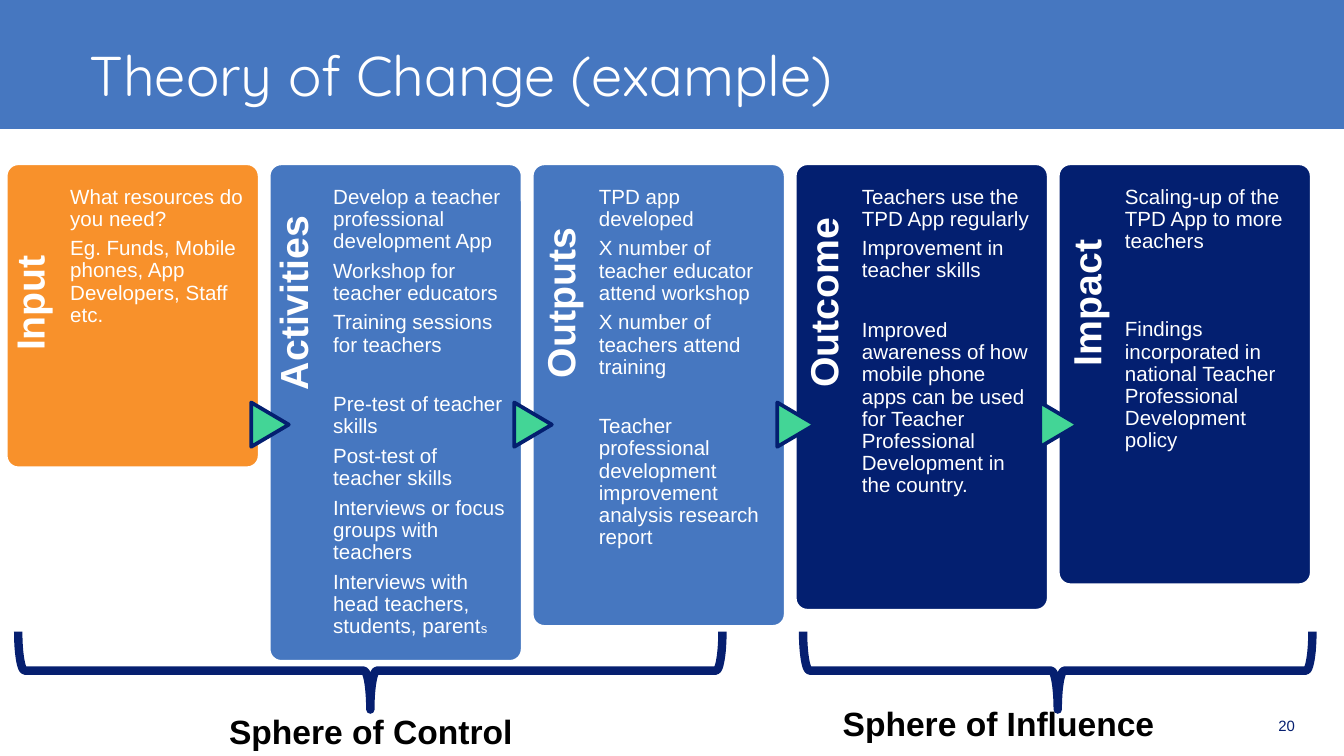
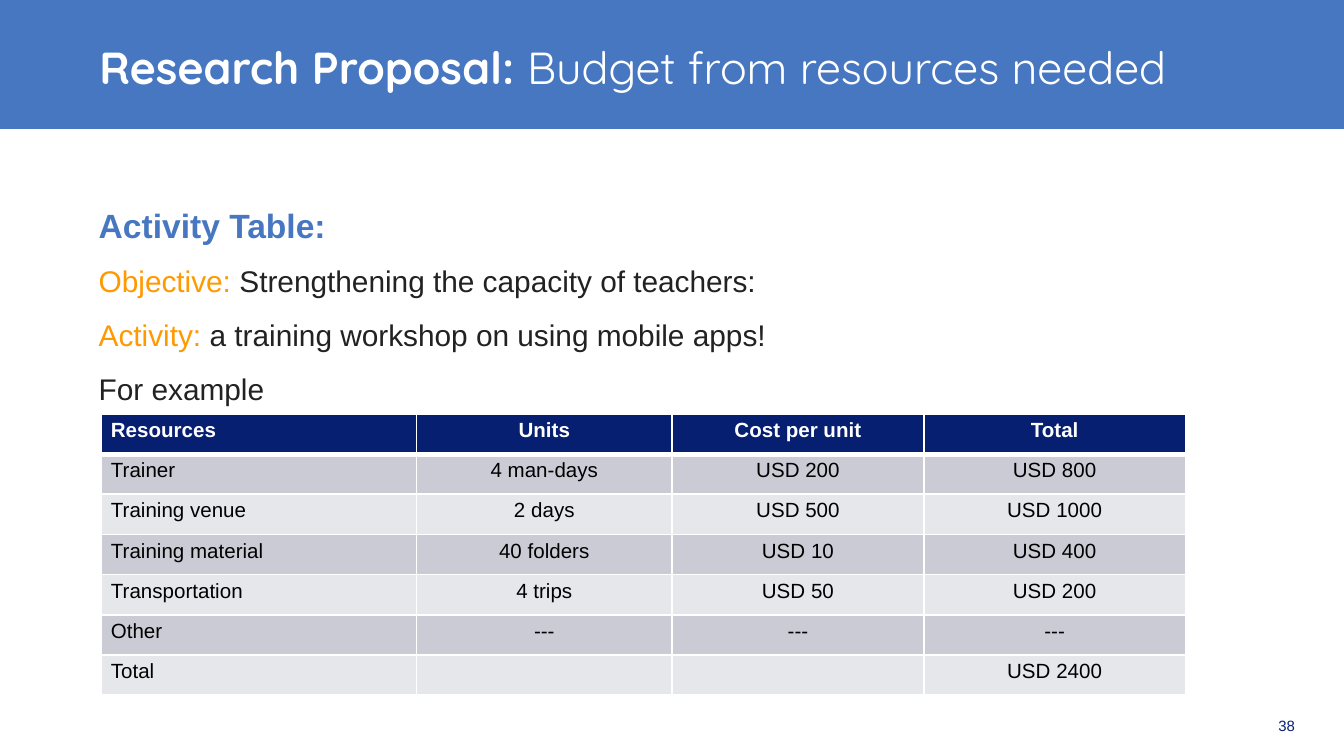
import pptx
import pptx.util
import pptx.dml.color
import pptx.enum.shapes
import pptx.enum.text
import pptx.oxml
import pptx.oxml.ns

Pt = pptx.util.Pt
RGBColor = pptx.dml.color.RGBColor
MSO_SHAPE = pptx.enum.shapes.MSO_SHAPE
ALIGN = pptx.enum.text.PP_ALIGN
ANCHOR = pptx.enum.text.MSO_ANCHOR

BLUE = RGBColor(0x46, 0x77, 0xC0)
NAVY = RGBColor(0x06, 0x1F, 0x70)
DEEP_NAVY = RGBColor(0x03, 0x1F, 0x70)
ORANGE = RGBColor(0xF8, 0x91, 0x2B)
AMBER = RGBColor(0xFF, 0x99, 0x00)
GREEN = RGBColor(0x43, 0xD5, 0x96)
WHITE = RGBColor(0xFF, 0xFF, 0xFF)
BLACK = RGBColor(0x00, 0x00, 0x00)
CHARCOAL = RGBColor(0x22, 0x22, 0x22)
GREY = RGBColor(0xCA, 0xCB, 0xD4)
PALE_GREY = RGBColor(0xE6, 0xE7, 0xEB)

prs = pptx.Presentation()
prs.slide_width = pptx.util.Inches(10)
prs.slide_height = prs.slide_width * 9 // 16
COL = prs.slide_width / 100


def add_shape(s, kind, box, fill=None, line=None, width=2, adj=None, rotation=0):
    sp = s.shapes.add_shape(kind, *[round(v * COL) for v in box])
    sp.shadow.inherit = False
    sp.rotation = rotation
    if adj is not None:
        sp.adjustments[0] = adj
    if fill is None:
        sp.fill.background()
    else:
        sp.fill.solid()
        sp.fill.fore_color.rgb = fill
    if line is None:
        sp.line.fill.background()
    else:
        sp.line.color.rgb = line
        sp.line.width = Pt(width)
    return sp


def add_text(s, box, paras, size, color, bold=False, font="Arial", align=ALIGN.LEFT,
             anchor=ANCHOR.TOP, insets=(0.75, 0.4, 0.75, 0.4), spacing=1.0):
    sp = s.shapes.add_textbox(*[round(v * COL) for v in box])
    tf = sp.text_frame
    tf.word_wrap = True
    tf.vertical_anchor = anchor
    tf.margin_left, tf.margin_top, tf.margin_right, tf.margin_bottom = [
        round(v * COL) for v in insets]
    for i, runs in enumerate(paras):
        p = tf.add_paragraph() if i else tf.paragraphs[0]
        for text in runs:
            p.add_run().text = text
        p.alignment = align
        p.line_spacing = spacing
        p.font.name = font
        p.font.size = Pt(size)
        p.font.bold = bold
        p.font.color.rgb = color
    return sp


slides = []
for number, title, size, box in [
    ("20", ["Theory of Change (example)"], 30, (5.9, 1.5, 87.4, 8)),
    ("38", ["Research Proposal: ", "Budget from resources needed"], 24, (6.65, 0.95, 86.7, 8)),
]:
    s = prs.slides.add_slide(prs.slide_layouts[6])
    add_shape(s, MSO_SHAPE.RECTANGLE, (0, -0.2, 100, 9.8), BLUE)
    sp = add_text(s, box, [title], size, WHITE, font="Quicksand", anchor=ANCHOR.MIDDLE)
    if len(title) > 1:
        sp.text_frame.paragraphs[0].runs[0].font.bold = True
    add_text(s, (88.4, 51.75, 8.7, 3), [[number]], 8, NAVY, align=ALIGN.RIGHT,
             anchor=ANCHOR.BOTTOM, insets=(0.75, 0.4, 0.75, 0.1))
    slides.append(s)

s = slides[0]
CARD_LEFT, CARD_TOP, CARD_STEP, CARD_WIDTH = 0.42, 12.15, 19.57, 18.9
cards = [
    ("Input", ORANGE, 22.7, (16.3, 3.1), (4.8, 13.1), [
        (0, ["What resources do you need?"]),
        (4, ["Eg. Funds, Mobile phones, App Developers, Staff etc."]),
    ]),
    ("Activities", BLUE, 37.1, (19.8, 3.2), (4.8, 13.1), [
        (0, ["Develop a teacher professional development App"]),
        (4, ["Workshop for teacher educators"]),
        (4, ["Training sessions for teachers"]),
        (20, ["Pre-test of teacher skills"]),
        (4, ["Post-test of teacher skills"]),
        (4, ["Interviews or focus groups with teachers"]),
        (4, ["Interviews with head teachers, students, parent", "s"]),
    ]),
    ("Outputs", BLUE, 34.5, (19, 3.8), (5, 12.8), [
        (0, ["TPD app developed"]),
        (4, ["X number of teacher educator attend workshop"]),
        (4, ["X number of teachers attend training"]),
        (20, ["Teacher professional development improvement analysis research report"]),
    ]),
    ("Outcome", DEEP_NAVY, 33.3, (18.7, 3.8), (5, 12.8), [
        (0, ["Teachers use the TPD App regularly"]),
        (4, ["Improvement in teacher skills"]),
        (20, ["Improved awareness of how mobile phone apps can be used for Teacher "
              "Professional Development in the country."]),
    ]),
    ("Impact", DEEP_NAVY, 31.4, (18.8, 3.8), (5, 12.8), [
        (0, ["Scaling-up of the TPD App to more teachers"]),
        (35.5, ["Findings incorporated in national Teacher Professional Development policy"]),
    ]),
]
for i, (label, fill, height, (lw, lh), (indent, width), items) in enumerate(cards):
    left = CARD_LEFT + i * CARD_STEP
    add_shape(s, MSO_SHAPE.ROUNDED_RECTANGLE, (left, CARD_TOP, CARD_WIDTH, height),
              fill, WHITE, adj=0.05)
    sp = add_text(s, (left + lh / 2 - lw / 2, 22.05 - lh / 2, lw, lh), [[label]], 21, WHITE,
                  bold=True, align=ALIGN.CENTER, anchor=ANCHOR.MIDDLE,
                  insets=(0, 0.8, 1, 0), spacing=0.9)
    sp.rotation = 270
    if i:
        add_shape(s, MSO_SHAPE.FLOWCHART_EXTRACT, (left - 1.55, 30.2, 3.3, 2.8),
                  GREEN, DEEP_NAVY, rotation=90)
    sp = add_text(s, (left + indent, CARD_TOP + 1.22, width, height - 1.3),
                  [runs for gap, runs in items], 11, WHITE,
                  insets=(0, 0.5, 0, 0), spacing=0.9)
    for p, (gap, runs) in zip(sp.text_frame.paragraphs, items):
        p.space_before = Pt(gap)
        for r in p.runs[1:]:
            r.font.size = Pt(7)

for name, brace, left, top in [
    ("Sphere of Control", (24.65, 23.7, 5.8, 52.4), 4.8, 52.5),
    ("Sphere of Influence", (75.8, 30.95, 5.8, 37.9), 51.5, 51.9),
]:
    add_shape(s, MSO_SHAPE.RIGHT_BRACE, brace, line=NAVY, width=4.5, adj=0.083, rotation=90)
    add_text(s, (left, top, 45.6, 3.8), [[name]], 18, BLACK, bold=True, align=ALIGN.CENTER)

s = slides[1]
sp = add_text(s, (6.6, 13.35, 86.6, 38.4), [
    ["Activity Table:"],
    ["Objective: ", "Strengthening the capacity of teachers:"],
    ["Activity: ", "a training workshop on using mobile apps!"],
    ["For example"],
], 16, CHARCOAL, spacing=1.5)
heading, objective, activity, example = sp.text_frame.paragraphs
heading.font.size = Pt(18)
heading.font.bold = True
heading.font.color.rgb = BLUE
for p in (objective, activity):
    p.runs[0].font.color.rgb = AMBER

rows = [
    ("Resources", "Units", "Cost per unit", "Total"),
    ("Trainer", "4 man-days", "USD 200", "USD 800"),
    ("Training venue", "2 days", "USD 500", "USD 1000"),
    ("Training material", "40 folders", "USD 10", "USD 400"),
    ("Transportation", "4 trips", "USD 50", "USD 200"),
    ("Other", "---", "---", "---"),
    ("Total", "", "", "USD 2400"),
]
widths = [23.5, 19, 18.75, 19.45]
ROW_HEIGHT = 2.99
table = s.shapes.add_table(len(rows), len(widths), *[
    round(v * COL) for v in (7.5, 30.8, sum(widths), ROW_HEIGHT * len(rows))]).table
for column, width in zip(table.columns, widths):
    column.width = round(width * COL)
for i, row in enumerate(rows):
    table.rows[i].height = round(ROW_HEIGHT * COL)
    for j, text in enumerate(row):
        cell = table.cell(i, j)
        tcPr = cell._tc.get_or_add_tcPr()
        for side in "LRTB":
            heavy = (i, side) in ((0, "B"), (1, "T"))
            tcPr.append(pptx.oxml.parse_xml(
                f'<a:ln{side} {pptx.oxml.ns.nsdecls("a")} w="{Pt(3 if heavy else 1)}">'
                f'<a:solidFill><a:srgbClr val="{WHITE}"/></a:solidFill></a:ln{side}>'))
        cell.fill.solid()
        cell.fill.fore_color.rgb = NAVY if i == 0 else GREY if i % 2 else PALE_GREY
        cell.margin_left = cell.margin_right = round(0.75 * COL)
        cell.margin_top = cell.margin_bottom = round(0.38 * COL)
        p = cell.text_frame.paragraphs[0]
        p.alignment = ALIGN.CENTER if j else ALIGN.LEFT
        p.font.name = "Arial"
        p.font.size = Pt(11)
        p.font.bold = i == 0
        p.font.color.rgb = BLACK if i else WHITE
        if text:
            p.add_run().text = text
        else:
            p._p.get_or_add_endParaRPr().set("sz", "1100")

prs.save("out.pptx")
